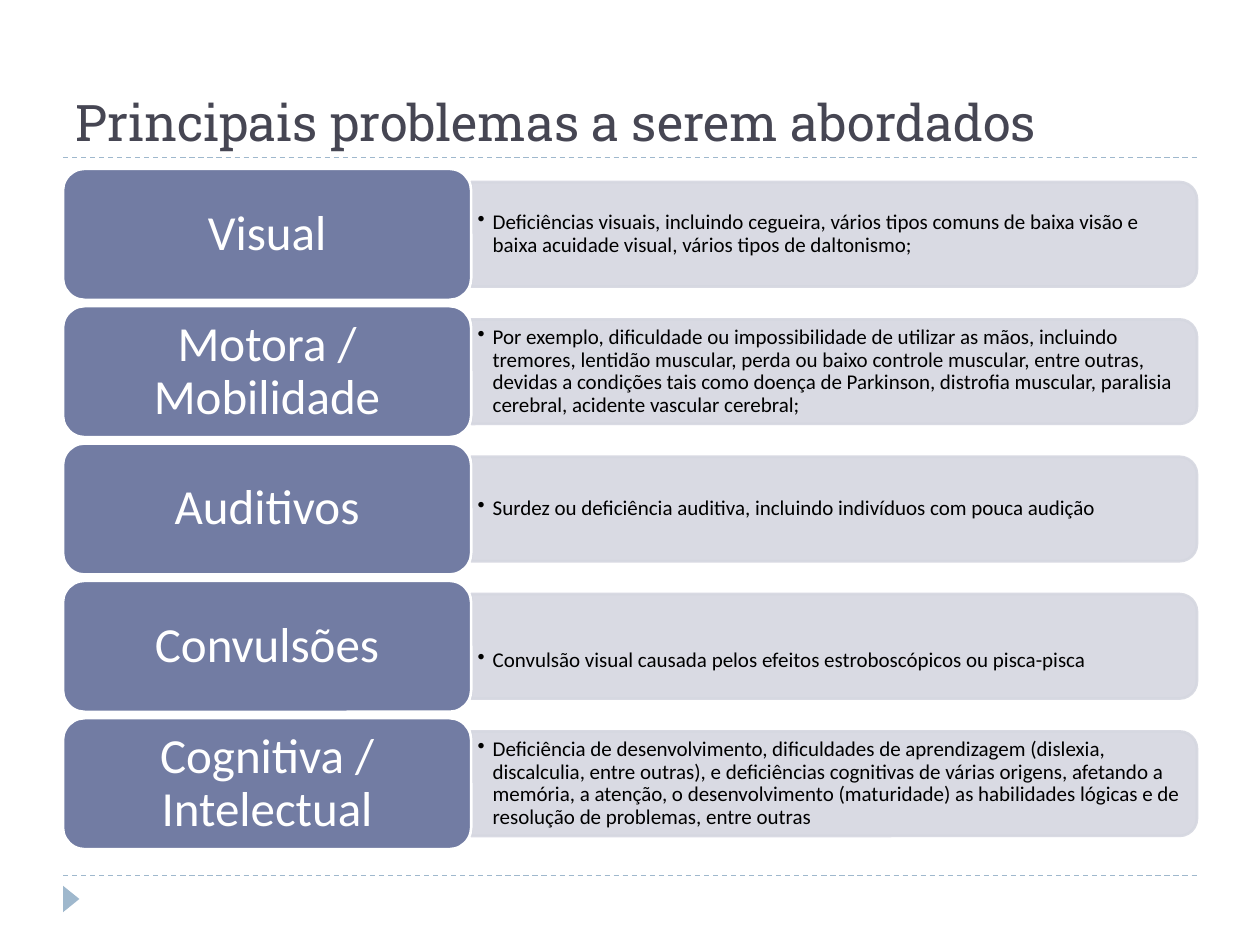
"""Build a slide of five problem groups, each a label beside its details."""
from dataclasses import dataclass

from lxml.etree import SubElement
from pptx import Presentation
from pptx.dml.color import RGBColor
from pptx.enum.dml import MSO_LINE
from pptx.enum.shapes import MSO_CONNECTOR, MSO_SHAPE
from pptx.enum.text import MSO_ANCHOR, PP_ALIGN
from pptx.oxml.ns import qn
from pptx.util import Inches, Pt

WHITE = RGBColor(0xFF, 0xFF, 0xFF)
BLACK = RGBColor(0x00, 0x00, 0x00)
SLATE = RGBColor(0x46, 0x46, 0x53)
INDIGO = RGBColor(0x72, 0x7C, 0xA3)
PALE = RGBColor(0xD5, 0xD7, 0xE0)
SKY = RGBColor(0x9F, 0xB8, 0xCD)

LEFT, TOP, STEP = 0.5, 1.34, 1.09
LABEL_W, LABEL_H = 3.24, 1.04
PANEL_W, PANEL_H = 5.76, 0.83
NOTE_W, NOTE_H = 5.72, 0.75


@dataclass(frozen=True)
class Row:
    """A problem group, with the drop of its detail in inches."""
    label: str
    detail: str
    drop: float = 0


ROWS = (
    Row("Visual",
        "Deficiências visuais, incluindo cegueira, vários tipos comuns de baixa visão e "
        "baixa acuidade visual, vários tipos de daltonismo;"),
    Row("Motora / Mobilidade",
        "Por exemplo, dificuldade ou impossibilidade de utilizar as mãos, incluindo "
        "tremores, lentidão muscular, perda ou baixo controle muscular, entre outras, "
        "devidas a condições tais como doença de Parkinson, distrofia muscular, paralisia "
        "cerebral, acidente vascular cerebral;"),
    Row("Auditivos",
        "Surdez ou deficiência auditiva, incluindo indivíduos com pouca audição"),
    Row("Convulsões",
        "Convulsão visual causada pelos efeitos estroboscópicos ou pisca-pisca",
        drop=0.22),
    Row("Cognitiva / Intelectual",
        "Deficiência de desenvolvimento, dificuldades de aprendizagem (dislexia, "
        "discalculia, entre outras), e deficiências cognitivas de várias origens, "
        "afetando a memória, a atenção, o desenvolvimento (maturidade) as habilidades "
        "lógicas e de resolução de problemas, entre outras"),
)


def add_shape(slide, kind: MSO_SHAPE, box: tuple, fill: RGBColor,
              edge: RGBColor | None = None, turn: float = 0):
    """Add a flat preset shape."""
    shape = slide.shapes.add_shape(kind, *map(Inches, box))
    shape.shadow.inherit = False
    shape.rotation = turn
    shape.fill.solid()
    shape.fill.fore_color.rgb = fill
    if edge is None:
        shape.line.fill.background()
    else:
        shape.line.color.rgb = edge
        shape.line.width = Pt(1.5)
    return shape


def add_rule(slide, y: float) -> None:
    """Add a dashed line across the slide."""
    rule = slide.shapes.add_connector(
        MSO_CONNECTOR.STRAIGHT, Inches(LEFT), Inches(y), Inches(9.5), Inches(y))
    rule.line.color.rgb = SKY
    rule.line.width = Pt(0.75)
    rule.line.dash_style = MSO_LINE.DASH
    SubElement(rule._element.spPr, qn("a:effectLst"))


def add_box(slide, box: tuple):
    """Add an empty text box."""
    return slide.shapes.add_textbox(*map(Inches, box))


def write(shape, text: str, size: float, color: RGBColor, pad: tuple,
          font: str = "Calibri", anchor: MSO_ANCHOR = MSO_ANCHOR.MIDDLE):
    """Write one run in a shape and return its paragraph."""
    frame = shape.text_frame
    frame.word_wrap = True
    frame.vertical_anchor = anchor
    frame.margin_left = frame.margin_right = Inches(pad[0])
    frame.margin_top = frame.margin_bottom = Inches(pad[1])
    para = frame.paragraphs[0]
    run = para.add_run()
    run.text = text
    run.font.name = font
    run.font.size = Pt(size)
    run.font.color.rgb = color
    return para


def add_bullet(para) -> None:
    """Give a paragraph a hanging bullet."""
    props = para._p.get_or_add_pPr()
    props.set("marL", str(Inches(0.12)))
    props.set("indent", str(-Inches(0.12)))
    SubElement(props, qn("a:buChar"), char="•")


def add_row(slide, row: Row, top: float) -> None:
    """Draw the panel, detail and label of one row."""
    mid = top + LABEL_H / 2
    edge = LEFT + LABEL_W
    panel = add_shape(
        slide, MSO_SHAPE.ROUND_2_SAME_RECTANGLE,
        (edge + (PANEL_W - PANEL_H) / 2, mid - PANEL_W / 2, PANEL_H, PANEL_W),
        PALE, PALE, 90)
    for tint in panel._element.spPr.iter(qn("a:srgbClr")):
        SubElement(tint, qn("a:alpha"), val="90000")

    note = add_box(slide, (edge, mid - NOTE_H / 2, NOTE_W, NOTE_H))
    para = write(note, row.detail, 12, BLACK, (0.05, 0.03))
    para.line_spacing = 0.9
    add_bullet(para)
    note.text_frame.margin_top += Inches(row.drop)

    label = add_shape(slide, MSO_SHAPE.ROUNDED_RECTANGLE,
                      (LEFT, top, LABEL_W, LABEL_H), INDIGO, WHITE)
    para = write(label, row.label, 28, WHITE, (0.17, 0.11))
    para.alignment = PP_ALIGN.CENTER
    para.line_spacing = 0.9


def main() -> None:
    """Build and save the slide."""
    deck = Presentation()
    deck.slide_width, deck.slide_height = Inches(10), Inches(7.5)
    slide = deck.slides.add_slide(deck.slide_layouts[6])
    for y in (6.95, 1.25):
        add_rule(slide, y)
    add_shape(slide, MSO_SHAPE.ISOSCELES_TRIANGLE, (0.46, 7.07, 0.21, 0.13), SKY, turn=90)
    title = add_box(slide, (0.5, 0.17, 9, 1.08))
    write(title, "Principais problemas a serem abordados", 28.8, SLATE, (0.1, 0.05),
          "Roboto Slab", MSO_ANCHOR.BOTTOM)
    for i, row in enumerate(ROWS):
        add_row(slide, row, TOP + i * STEP)
    deck.save("out.pptx")


if __name__ == "__main__":
    main()
